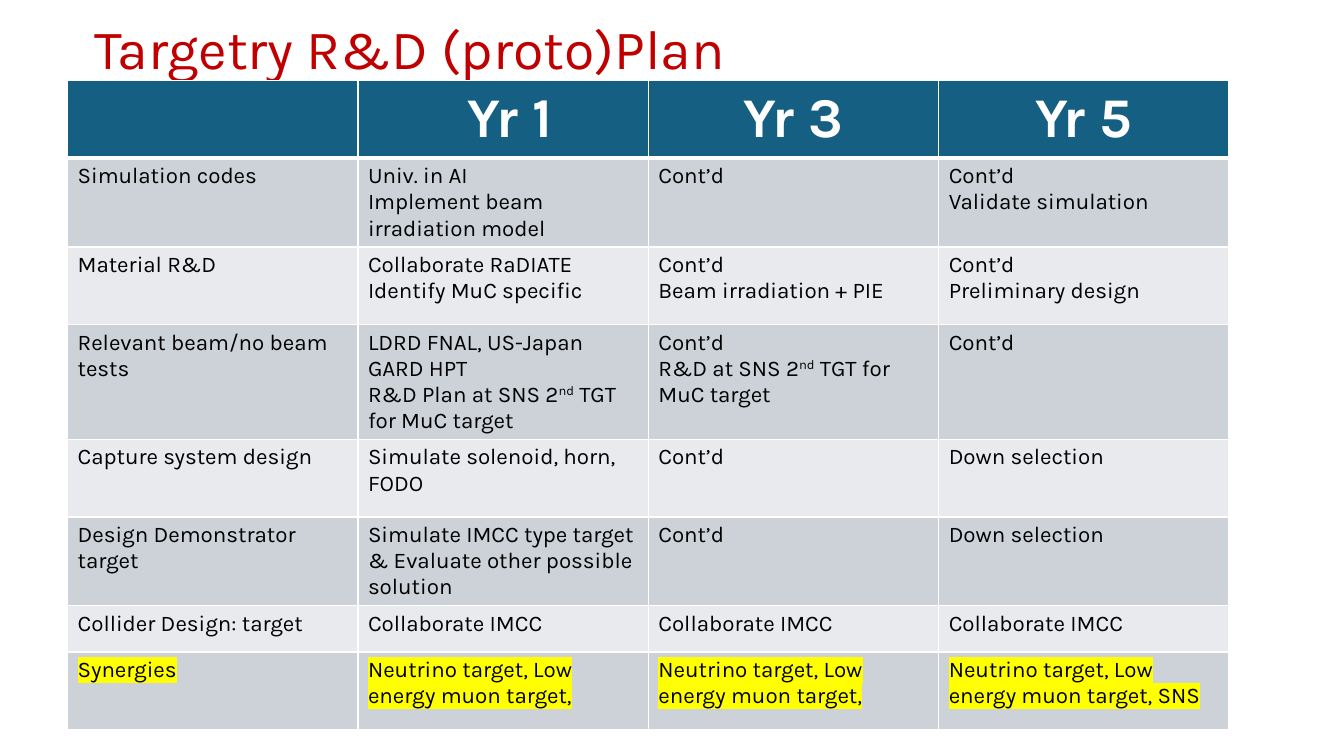
from dataclasses import dataclass

from lxml import etree
from pptx import Presentation
from pptx.dml.color import RGBColor
from pptx.enum.text import MSO_ANCHOR, PP_ALIGN
from pptx.oxml.ns import qn
from pptx.util import Pt

LEFT, CENTER = PP_ALIGN.LEFT, PP_ALIGN.CENTER
TOP, MIDDLE = MSO_ANCHOR.TOP, MSO_ANCHOR.MIDDLE
TITLE_ONLY_LAYOUT = 5
EMU_PER_PX = 9144  # 100 px to the inch


@dataclass(frozen=True)
class Theme:
    font: str = "Karla"
    title: str = "C00000"
    header: str = "156082"
    bands: tuple = ("CCD2D8", "E8EAED")
    text: str = "000000"
    white: str = "FFFFFF"
    highlight: str = "FFFF00"
    title_size: float = 39.6
    header_size: int = 40
    body_size: int = 16
    thin_line: int = 1
    thick_line: int = 3


THEME = Theme()

# Plan contents: newlines part paragraphs, carets enclose superscripts
HEADERS = ("", " Yr 1", "Yr 3", "Yr 5")
PLAN = (
    ("Simulation codes", "Univ. in AI\nImplement beam irradiation model",
     "Cont’d", "Cont’d\nValidate simulation"),
    ("Material R&D", "Collaborate RaDIATE\nIdentify MuC specific",
     "Cont’d\nBeam irradiation + PIE", "Cont’d\nPreliminary design"),
    ("Relevant beam/no beam tests",
     "LDRD FNAL, US-Japan\nGARD HPT\nR&D Plan at SNS 2^nd^ TGT for MuC target",
     "Cont’d\nR&D at SNS 2^nd^ TGT for MuC target", "Cont’d"),
    ("Capture system design", "Simulate solenoid, horn, FODO",
     "Cont’d", "Down selection"),
    ("Design Demonstrator target",
     "Simulate IMCC type target & Evaluate other possible solution",
     "Cont’d", "Down selection"),
    ("Collider Design: target",) + ("Collaborate IMCC",) * 3,
    ("Synergies",) + ("Neutrino target, Low energy muon target,",) * 2
    + ("Neutrino target, Low energy muon target, SNS",),
)
ROW_HEIGHTS = (77, 86, 77, 86, 77, 77, 46, 77)
COLUMN_WIDTH = 288


def px(length):
    return length * EMU_PER_PX


def format_run(run, size, color, bold=False, highlight=None):
    run.font.size = Pt(size)
    run.font.bold = bold
    run.font.color.rgb = RGBColor.from_string(color)
    run.font.name = THEME.font
    if highlight:
        mark = etree.Element(qn("a:highlight"))
        etree.SubElement(mark, qn("a:srgbClr"), val=highlight)
        run.font._element.find(qn("a:latin")).addprevious(mark)


def fill_paragraph(paragraph, line, **style):
    """Write a line whose caret-enclosed pieces are superscripts."""
    pieces = line.split("^")
    paragraph.text = pieces[0]
    for piece in pieces[1:]:
        paragraph.add_run().text = piece
    for index, run in enumerate(paragraph.runs):
        format_run(run, **style)
        if index % 2:
            run.font._element.set("baseline", "30000")


def set_borders(cell, top, bottom):
    properties = cell._tc.get_or_add_tcPr()
    widths = {"L": THEME.thin_line, "R": THEME.thin_line, "T": top, "B": bottom}
    for side, width in widths.items():
        line = etree.SubElement(properties, qn(f"a:ln{side}"), w=str(Pt(width)))
        fill = etree.SubElement(line, qn("a:solidFill"))
        etree.SubElement(fill, qn("a:srgbClr"), val=THEME.white)


def fill_cell(cell, text, fill, alignment=LEFT, anchor=TOP, **style):
    cell.fill.solid()
    cell.fill.fore_color.rgb = RGBColor.from_string(fill)
    cell.vertical_anchor = anchor
    cell.text_frame.text = text
    for paragraph, line in zip(cell.text_frame.paragraphs, text.split("\n")):
        paragraph.alignment = alignment
        fill_paragraph(paragraph, line, **style)


def add_title(slide, text):
    title = slide.shapes.title
    title.left, title.top, title.width, title.height = map(px, (84, 15, 1150, 73))
    frame = title.text_frame
    frame.text = text
    frame.word_wrap = True
    frame.vertical_anchor = MIDDLE
    paragraph = frame.paragraphs[0]
    paragraph.alignment = LEFT
    paragraph.line_spacing = 0.9
    format_run(paragraph.runs[0], THEME.title_size, THEME.title)


def add_plan_table(slide):
    rows, columns = len(ROW_HEIGHTS), len(HEADERS)
    table = slide.shapes.add_table(
        rows, columns, px(67), px(80),
        px(COLUMN_WIDTH * columns), px(sum(ROW_HEIGHTS))).table
    for column in table.columns:
        column.width = px(COLUMN_WIDTH)
    for row, height in zip(table.rows, ROW_HEIGHTS):
        row.height = px(height)

    # A thick rule parts the header from the body
    for row in range(rows):
        for column in range(columns):
            set_borders(table.cell(row, column),
                        top=THEME.thick_line if row == 1 else THEME.thin_line,
                        bottom=THEME.thick_line if row == 0 else THEME.thin_line)

    # Header row
    for column, text in enumerate(HEADERS):
        fill_cell(table.cell(0, column), text, THEME.header, CENTER, MIDDLE,
                  size=THEME.header_size, color=THEME.white, bold=True)

    # Banded body, with the last row highlighted
    for row, texts in enumerate(PLAN, start=1):
        highlight = THEME.highlight if row == len(PLAN) else None
        for column, text in enumerate(texts):
            fill_cell(table.cell(row, column), text, THEME.bands[(row - 1) % 2],
                      size=THEME.body_size, color=THEME.text, highlight=highlight)


def main():
    presentation = Presentation()
    presentation.slide_width = px(1333)
    presentation.slide_height = px(750)
    slide = presentation.slides.add_slide(
        presentation.slide_layouts[TITLE_ONLY_LAYOUT])
    add_title(slide, "Targetry R&D (proto)Plan")
    add_plan_table(slide)
    presentation.save("out.pptx")


if __name__ == "__main__":
    main()
